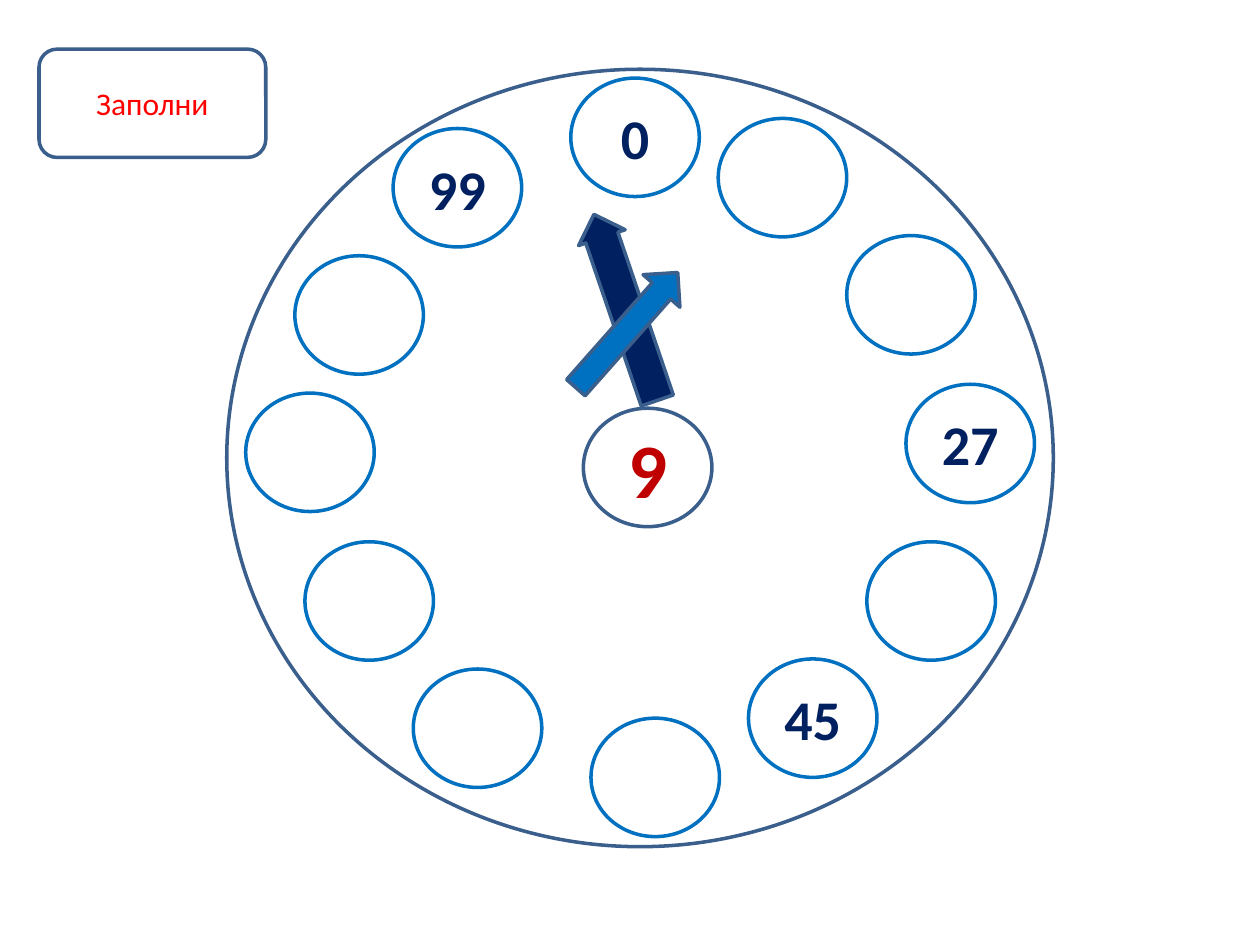
"""Build a clock-face worksheet for the nine times table."""
from pptx import Presentation
from pptx.dml.color import RGBColor
from pptx.enum.shapes import MSO_SHAPE
from pptx.enum.text import MSO_ANCHOR, PP_ALIGN
from pptx.util import Inches, Pt

OVAL = MSO_SHAPE.OVAL
ARROW = MSO_SHAPE.UP_ARROW
ROUND = MSO_SHAPE.ROUNDED_RECTANGLE
MIDDLE = MSO_ANCHOR.MIDDLE
CENTER = PP_ALIGN.CENTER

HUES = {
    "white": "FFFFFF",
    "edge": "3A5F8C",
    "blue": "0070C0",
    "navy": "002060",
    "crimson": "C00000",
    "red": "FF0000",
}
FONTS = {
    "hour": {"size": Pt(32), "bold": True, "name": "Calibri"},
    "factor": {"size": Pt(44), "bold": True, "name": "Calibri"},
    "label": {"size": Pt(18), "bold": False, "name": "Calibri"},
}


def add_form(kind, box, fill="white", line="edge"):
    form = slide.shapes.add_shape(kind, *[Inches(side) for side in box])
    form.shadow.inherit = False
    form.fill.solid()
    form.fill.fore_color.rgb = RGBColor.from_string(HUES[fill])
    form.line.color.rgb = RGBColor.from_string(HUES[line])
    form.line.width = Pt(2)
    return form


def add_text(form, text, style, hue):
    frame = form.text_frame
    frame.word_wrap = True
    frame.vertical_anchor = MIDDLE
    para = frame.paragraphs[0]
    para.alignment = CENTER
    run = para.add_run()
    run.text = text
    for key, value in FONTS[style].items():
        setattr(run.font, key, value)
    run.font.color.rgb = RGBColor.from_string(HUES[hue])


deck = Presentation()
deck.slide_width = Inches(10)
deck.slide_height = Inches(7.5)
slide = deck.slides.add_slide(deck.slide_layouts[6])

add_form(OVAL, (1.8, 0.55, 6.56, 6.17))

SIZE = (1.02, 0.94)
hours = [
    (4.53, 0.62, "0"),
    (5.7, 0.94, ""),
    (6.72, 1.87, ""),
    (7.19, 3.05, "27"),
    (6.88, 4.3, ""),
    (5.94, 5.23, "45"),
    (4.69, 5.7, ""),
    (3.28, 5.31, ""),
    (2.42, 4.3, ""),
    (1.95, 3.12, ""),
    (2.34, 2.03, ""),
    (3.12, 1.02, "99"),
]
for left, top, text in hours:
    hour = add_form(OVAL, (left, top, *SIZE), line="blue")
    if text:
        add_text(hour, text, "hour", "navy")

hub = add_form(OVAL, (4.63, 3.24, *SIZE))
add_text(hub, "9", "factor", "crimson")

hands = [
    ((4.77, 1.66, 0.39, 1.56), "navy", 341.2, 0.69),
    ((4.78, 2.01, 0.39, 1.22), "blue", 41.5, 0.5),
]
for box, hue, angle, width in hands:
    hand = add_form(ARROW, box, hue)
    hand.rotation = angle
    hand.adjustments[0] = width

label = add_form(ROUND, (0.31, 0.39, 1.8, 0.86))
add_text(label, "Заполни", "label", "red")

deck.save("out.pptx")
